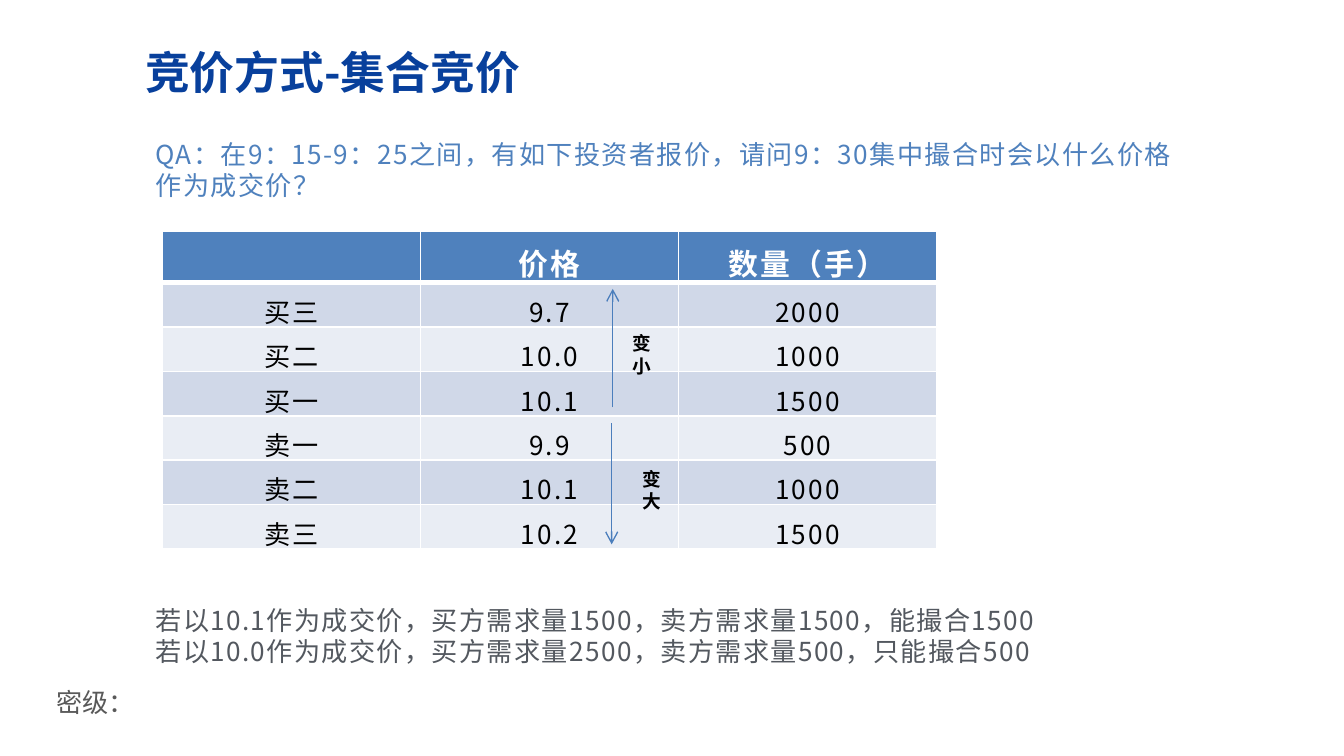
from lxml import etree
from pptx import Presentation
from pptx.dml.color import RGBColor
from pptx.enum.shapes import MSO_CONNECTOR
from pptx.enum.text import MSO_ANCHOR, MSO_AUTO_SIZE, PP_ALIGN
from pptx.oxml.ns import qn
from pptx.util import Cm, Pt

FONT = "Noto Sans CJK SC"
NAVY = RGBColor(0x08, 0x40, 0x9C)
BLUE = RGBColor(0x4F, 0x81, 0xBD)
ARROW_BLUE = RGBColor(0x4B, 0x7E, 0xBC)
SLATE = RGBColor(0x53, 0x58, 0x5F)
GREY = RGBColor(0x59, 0x59, 0x59)
BLACK = RGBColor(0, 0, 0)
WHITE = RGBColor(0xFF, 0xFF, 0xFF)
BANDS = (RGBColor(0xD0, 0xD8, 0xE8), RGBColor(0xE9, 0xED, 0xF4))
MIDDLE = MSO_ANCHOR.MIDDLE
NO_FIT = MSO_AUTO_SIZE.NONE
LEFT = PP_ALIGN.LEFT
CENTER = PP_ALIGN.CENTER
STRAIGHT = MSO_CONNECTOR.STRAIGHT
TITLE_ONLY = 5

QUOTES = [
    ("", "价格", "数量（手）"),
    ("买三", "9.7", "2000"),
    ("买二", "10.0", "1000"),
    ("买一", "10.1", "1500"),
    ("卖一", "9.9", "500"),
    ("卖二", "10.1", "1000"),
    ("卖三", "10.2", "1500"),
]


def add_run(para, text, size, color, bold=False, spacing=0):
    """Add a styled run; spacing is in hundredths of a point."""
    span = para.add_run()
    span.text = text
    font = span.font
    font.name, font.size, font.bold = FONT, Pt(size), bold
    font.color.rgb = color
    properties = span._r.get_or_add_rPr()
    etree.SubElement(properties, qn("a:ea")).set("typeface", FONT)
    if spacing:
        properties.set("spc", str(spacing))


def add_text(page, box, lines, size, color, bold=False, spacing=0, wrap=True):
    frame = page.shapes.add_textbox(*map(Cm, box)).text_frame
    frame.word_wrap = wrap
    for index, line in enumerate(lines):
        para = frame.add_paragraph() if index else frame.paragraphs[0]
        add_run(para, line, size, color, bold, spacing)
    return frame


def place_title(page, box, text):
    title = page.shapes.title
    title.left, title.top, title.width, title.height = map(Cm, box)
    frame = title.text_frame
    frame.auto_size, frame.vertical_anchor = NO_FIT, MIDDLE
    para = frame.paragraphs[0]
    para.alignment = LEFT
    add_run(para, text, 24, NAVY, bold=True)


def set_borders(cell, header_bottom):
    properties = cell._tc.get_or_add_tcPr()
    for side in "LRTB":
        width = 3 if header_bottom and side == "B" else 1
        line = etree.SubElement(properties, qn(f"a:ln{side}"), w=str(Pt(width)))
        fill = etree.SubElement(line, qn("a:solidFill"))
        etree.SubElement(fill, qn("a:srgbClr"), val=str(WHITE))


def add_quote_table(page, box, rows):
    table = page.shapes.add_table(len(rows), len(rows[0]), *map(Cm, box)).table
    for row_index, values in enumerate(rows):
        header = row_index == 0
        table.rows[row_index].height = Cm(0.97 if header else 0.84)
        for column_index, value in enumerate(values):
            cell = table.cell(row_index, column_index)
            set_borders(cell, header)
            cell.fill.solid()
            cell.fill.fore_color.rgb = BLUE if header else BANDS[(row_index - 1) % 2]
            cell.vertical_anchor = MIDDLE
            cell.margin_left = cell.margin_right = Cm(0.48)
            cell.margin_top = cell.margin_bottom = Cm(0.03)
            para = cell.text_frame.paragraphs[0]
            para.alignment, para.line_spacing = CENTER, 1.2
            if header:
                add_run(para, value, 16, WHITE, bold=True, spacing=120)
            else:
                add_run(para, value, 14, BLACK, spacing=120)


def add_trend(page, x, start, end, label_box, label):
    """Draw a vertical arrow with its stacked label."""
    arrow = page.shapes.add_connector(STRAIGHT, Cm(x), Cm(start), Cm(x), Cm(end))
    arrow.line.color.rgb = ARROW_BLUE
    arrow.line.width = Pt(0.75)
    etree.SubElement(arrow.line._get_or_add_ln(), qn("a:tailEnd"), type="arrow")
    etree.SubElement(arrow._element.spPr, qn("a:effectLst"))
    add_text(page, label_box, label, 10, BLACK, bold=True)


def build_auction_slide(deck):
    page = deck.slides.add_slide(deck.slide_layouts[TITLE_ONLY])

    # Classification mark
    mark = add_text(page, (0.89, 12.88, 2.31, 0.79), ["密级："], 14, GREY, wrap=False)
    mark.margin_left = mark.margin_right = Cm(0.18)
    mark.margin_top = mark.margin_bottom = Cm(0.1)

    # Title and question
    place_title(page, (2.49, 0.66, 15.39, 1.4), "竞价方式-集合竞价")
    question = "QA：在9：15-9：25之间，有如下投资者报价，请问9：30集中撮合时会以什么价格作为成交价？"
    add_text(page, (2.69, 2.49, 20.07, 1.45), [question], 14, BLUE, spacing=70)

    # Quotes and price trends
    add_quote_table(page, (3.07, 4.37, 14.63, 6.01), QUOTES)
    add_trend(page, 11.58, 7.7, 5.46, (11.71, 6.15, 1.65, 1.12), "变小")
    add_trend(page, 11.56, 8, 10.29, (11.89, 8.71, 1.42, 1.12), "变大")

    # Answer
    answer = [
        "若以10.1作为成交价，买方需求量1500，卖方需求量1500，能撮合1500",
        "若以10.0作为成交价，买方需求量2500，卖方需求量500，只能撮合500",
    ]
    add_text(page, (2.69, 11.3, 21.62, 1.63), answer, 14, SLATE, spacing=70)


def main():
    deck = Presentation()
    deck.slide_width, deck.slide_height = Cm(25.4), Cm(14.29)
    build_auction_slide(deck)
    deck.save("out.pptx")


if __name__ == "__main__":
    main()
